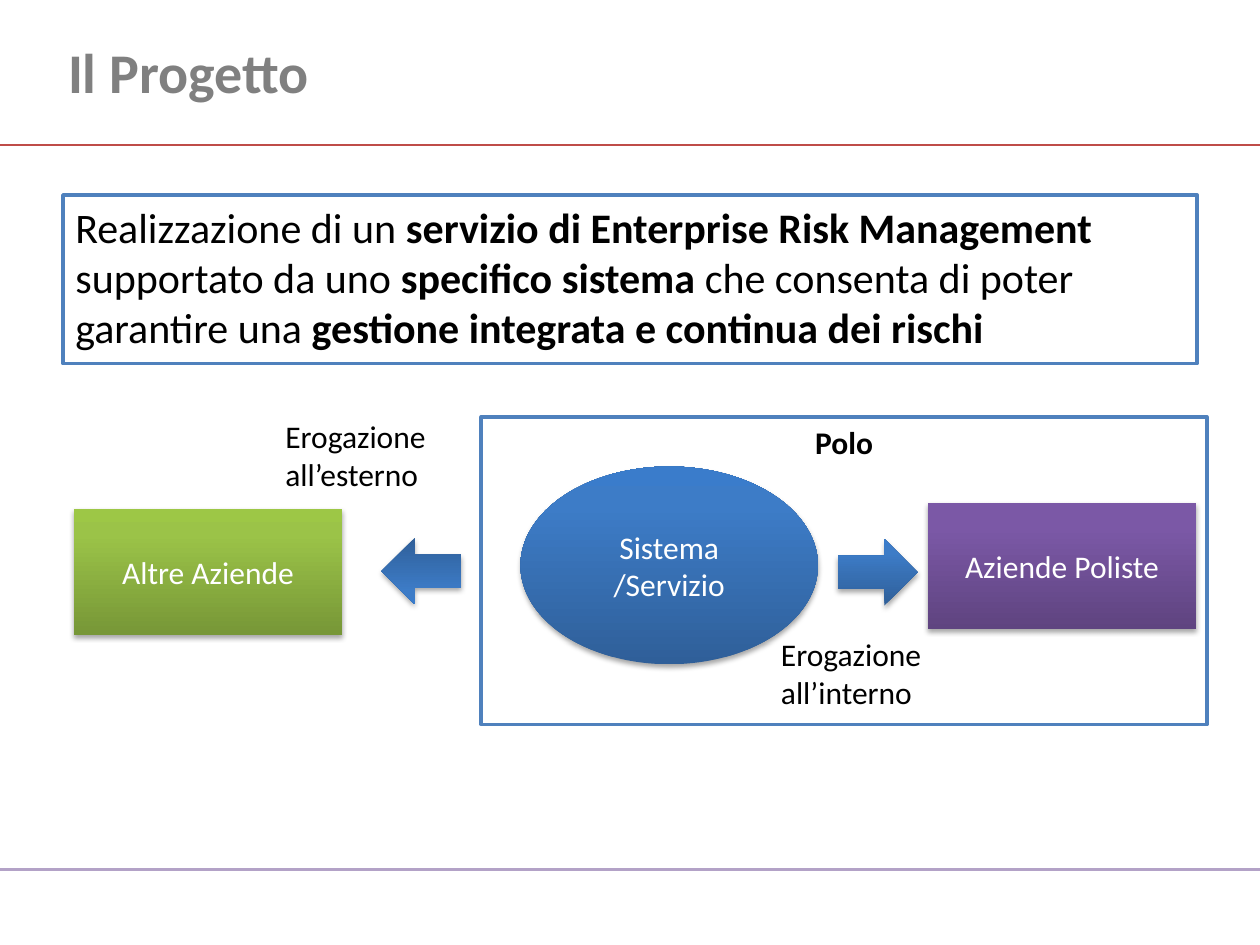
import copy
import pptx
import pptx.dml.color
import pptx.enum.shapes
import pptx.enum.text
import pptx.oxml
import pptx.oxml.ns
import pptx.util

Pt = pptx.util.Pt
SHAPE = pptx.enum.shapes.MSO_SHAPE
ANCHOR = pptx.enum.text.MSO_ANCHOR
ALIGN = pptx.enum.text.PP_ALIGN

BLUE = ("2F5F99", "3D7CC7", "3A7CCB")
PURPLE = ("5F4480", "7B58A6", "7C57A8")
GREEN = ("779737", "9BC348", "9DC746")
BORDER = "4F81BD"
SHADOW = (
    f'<a:outerShdw {pptx.oxml.ns.nsdecls("a")} blurRad="{Pt(3.1)}" dist="{Pt(1.8)}" '
    'dir="5400000" rotWithShape="0"><a:srgbClr val="000000">'
    '<a:alpha val="35000"/></a:srgbClr></a:outerShdw>'
)


def color(hex_value):
    return pptx.dml.color.RGBColor.from_string(hex_value)


def apply(target, values):
    for name, value in values.items():
        setattr(target, name, value)


def write(shape, runs, size=18, ink="000000", align=ALIGN.LEFT, **frame_format):
    frame = shape.text_frame
    apply(frame, {"word_wrap": True, "vertical_anchor": ANCHOR.TOP, **frame_format})
    paragraph = frame.paragraphs[0]
    paragraph.alignment = align
    for wording, bold in runs:
        run = paragraph.add_run()
        run.text = wording
        apply(run.font, {"name": "Calibri", "size": Pt(size), "bold": bold})
        run.font.color.rgb = color(ink)


def add_rule(slide, y, hex_value, width):
    rule = slide.shapes.add_connector(
        pptx.enum.shapes.MSO_CONNECTOR.STRAIGHT, 0, Pt(y), Pt(720), Pt(y))
    rule.line.color.rgb = color(hex_value)
    rule.line.width = Pt(width)
    properties = rule._element.spPr
    properties.append(properties.makeelement(pptx.oxml.ns.qn("a:effectLst"), {}))


def add_label(slide, box, runs, **text_format):
    label = slide.shapes.add_textbox(*map(Pt, box))
    write(label, runs, **text_format)


def add_frame(slide, box, runs, **text_format):
    frame = slide.shapes.add_shape(SHAPE.RECTANGLE, *map(Pt, box))
    frame.shadow.inherit = False
    frame.fill.solid()
    frame.fill.fore_color.rgb = color("FFFFFF")
    frame.line.color.rgb = color(BORDER)
    frame.line.width = Pt(2)
    write(frame, runs, **text_format)


def add_node(slide, kind, box, shades, wording="", rotation=0):
    node = slide.shapes.add_shape(kind, *map(Pt, box))
    node.rotation = rotation
    node.line.fill.background()
    node.fill.gradient()
    node.fill.gradient_angle = 90
    stop_list = node._element.spPr.find(".//" + pptx.oxml.ns.qn("a:gsLst"))
    stop_list.insert(1, copy.deepcopy(stop_list[0]))
    for stop, position, shade in zip(node.fill.gradient_stops, (0, 0.8, 1), shades):
        stop.position = position
        stop.color.rgb = color(shade)
    node.shadow.inherit = False
    effects = node._element.spPr.find(pptx.oxml.ns.qn("a:effectLst"))
    effects.append(pptx.oxml.parse_xml(SHADOW))
    if wording:
        write(node, [(wording, False)], ink="FFFFFF", align=ALIGN.CENTER,
              vertical_anchor=ANCHOR.MIDDLE)


def main():
    deck = pptx.Presentation()
    apply(deck, {"slide_width": Pt(720), "slide_height": Pt(540)})
    slide = deck.slides.add_slide(deck.slide_layouts[6])

    add_rule(slide, 82.8, "BF4C48", 0.75)
    add_rule(slide, 496.8, "B3A2C7", 1.75)
    add_frame(slide, (275, 238.3, 414.7, 175.7), [("Polo", True)], align=ALIGN.CENTER)
    add_label(slide, (2.9, 9.4, 409.7, 62.6), [("Il Progetto", True)], size=32,
              ink="808080", vertical_anchor=ANCHOR.MIDDLE, margin_left=Pt(36))
    add_frame(slide, (36, 111.4, 648, 96.5), [
        ("Realizzazione di un ", False),
        ("servizio di Enterprise Risk Management ", True),
        ("supportato da uno ", False),
        ("specifico sistema ", True),
        ("che consenta di poter garantire una ", False),
        ("gestione integrata e continua dei rischi", True),
    ], size=24)

    company, arrow, label = (153.4, 72), (45.6, 38), (108, 51)
    add_node(slide, SHAPE.OVAL, (297.4, 266.6, 170, 113), BLUE, "Sistema /Servizio")
    add_node(slide, SHAPE.RECTANGLE, (530.2, 287.4, *company), PURPLE, "Aziende Poliste")
    add_node(slide, SHAPE.RIGHT_ARROW, (478.8, 308, *arrow), BLUE)
    add_node(slide, SHAPE.RIGHT_ARROW, (218, 307.4, *arrow), BLUE, rotation=180)
    add_node(slide, SHAPE.RECTANGLE, (42.2, 290.9, *company), GREEN, "Altre Aziende")
    add_label(slide, (156, 234.7, *label), [("Erogazione all’esterno", False)])
    add_label(slide, (439.2, 359.3, *label), [("Erogazione all’interno", False)])

    deck.save("out.pptx")


if __name__ == "__main__":
    main()
